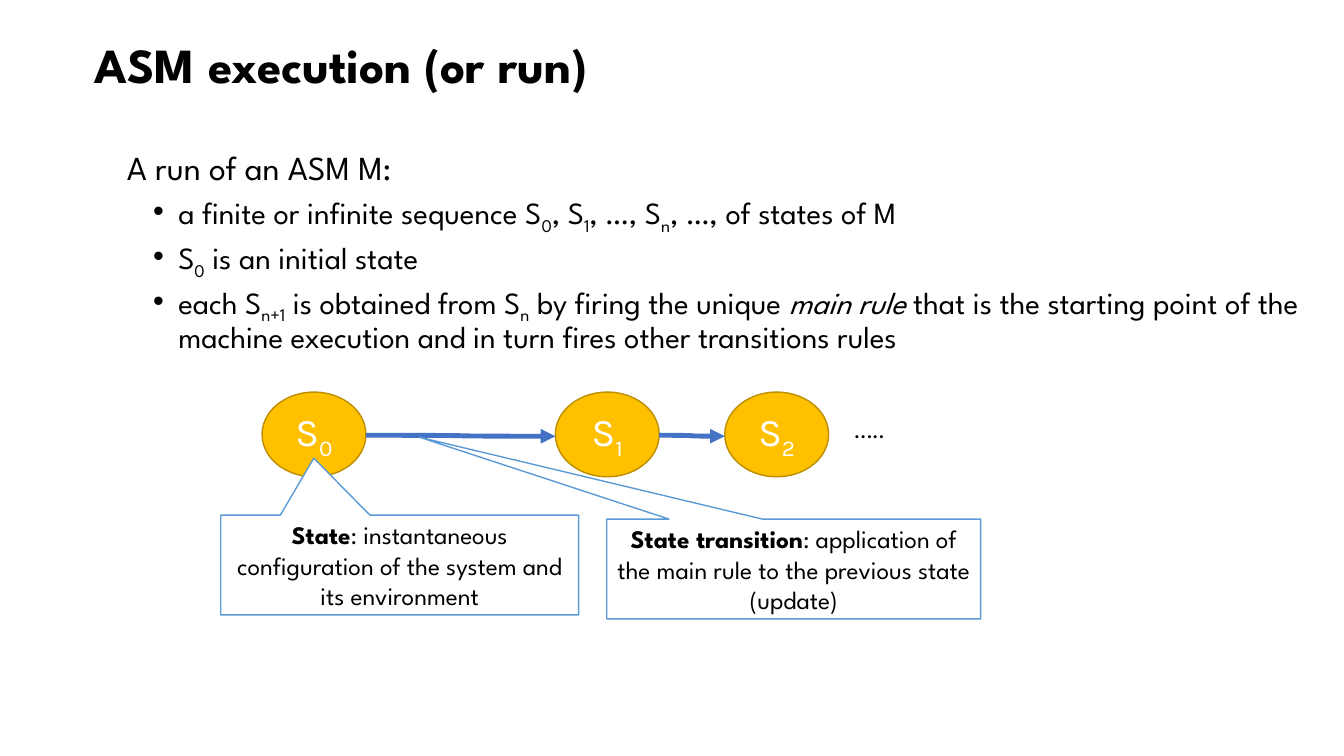
from dataclasses import dataclass

from lxml.etree import SubElement as Sub
from pptx import Presentation
from pptx.dml.color import RGBColor as RGB
from pptx.enum.shapes import MSO_CONNECTOR as Link, MSO_SHAPE as Kind
from pptx.enum.text import MSO_ANCHOR as Anchor, PP_ALIGN as Align
from pptx.oxml.ns import qn
from pptx.util import Pt


@dataclass(frozen=True)
class Theme:
    ink: RGB = RGB(0, 0, 0)
    white: RGB = RGB(255, 255, 255)
    gold: RGB = RGB(0xFF, 0xC0, 0x00)
    rim: RGB = RGB(0xBD, 0x8E, 0x00)
    edge: RGB = RGB(0x5B, 0x9B, 0xD5)
    arrow: RGB = RGB(0x44, 0x72, 0xC4)
    main: str = "League Spartan"
    node: str = "Karla"
    plain: str = "Calibri"
    title: int = 35
    lead: int = 24
    item: int = 22
    state: int = 28
    note: int = 18


T = Theme()

# State circles: shared size and top, left edge of each
WIDE, HIGH, TOP = 74.2, 60.5, 280.1
LEFTS = (187.2, 396.7, 517.7)
MID = 310.9

# Runs are (text, style); style is "", "sub", "bold" or "ital"
LEAD = [("A run of an ASM M:", "")]
ITEMS = [
    [("a finite or infinite sequence S", ""), ("0", "sub"), (", S", ""),
     ("1", "sub"), (", …, S", ""), ("n", "sub"), (", …, of states of M", "")],
    [("S", ""), ("0", "sub"), (" is an initial state", "")],
    [("each S", ""), ("n+1", "sub"), (" is obtained from S", ""), ("n", "sub"),
     (" by firing the unique ", ""), ("main rule ", "ital"),
     ("that is the starting point of the machine execution and in turn "
      "fires other transitions rules", "")],
]


def write(para, runs, face, size, color):
    """Fill a paragraph with styled runs in one font."""
    for text, style in runs:
        run = para.add_run()
        run.text = text
        if style == "sub":
            run._r.get_or_add_rPr().set("baseline", "-25000")
        elif style == "bold":
            run.font.bold = True
        elif style == "ital":
            run.font.italic = True
    font = para.font
    font.name, font.size = face, Pt(size)
    font.color.rgb = color


def add_box(slide, left, top, width, height):
    """Add a wrapping text box and return its frame."""
    box = slide.shapes.add_textbox(Pt(left), Pt(top), Pt(width), Pt(height))
    box.text_frame.word_wrap = True
    return box.text_frame


def indent(para, left, hang=0, mark=None):
    props = para._p.get_or_add_pPr()
    props.set("marL", str(Pt(left)))
    props.set("indent", str(Pt(-hang)))
    if mark:
        Sub(props, qn("a:buFont")).set("typeface", "Arial")
        Sub(props, qn("a:buChar")).set("char", mark)


def add_body(slide):
    frame = add_box(slide, 52.6, 104.4, 890.6, 356.4)
    para = frame.paragraphs[0]
    para.line_spacing = 0.9
    indent(para, 31)
    write(para, LEAD, T.main, T.lead, T.ink)
    for runs in ITEMS:
        para = frame.add_paragraph()
        para.level = 1
        para.line_spacing, para.space_before = 0.9, Pt(5)
        indent(para, 67.7, 18, "•")
        write(para, runs, T.main, T.item, T.ink)


def add_form(slide, kind, area, fill, line, runs, face, size, color):
    """Add a filled shape with centred text."""
    form = slide.shapes.add_shape(kind, *map(Pt, area))
    form.shadow.inherit = False
    form.fill.solid()
    form.fill.fore_color.rgb = fill
    form.line.color.rgb = line
    form.line.width = Pt(1)
    frame = form.text_frame
    frame.word_wrap = True
    frame.vertical_anchor = Anchor.MIDDLE
    para = frame.paragraphs[0]
    para.alignment = Align.CENTER
    write(para, runs, face, size, color)
    return form


def add_state(slide, left, index):
    add_form(slide, Kind.OVAL, (left, TOP, WIDE, HIGH), T.gold, T.rim,
             [("S", ""), (str(index), "sub")], T.node, T.state, T.white)


def add_note(slide, area, tip, term, text):
    """Add a callout whose tip is given relative to its centre."""
    note = add_form(slide, Kind.RECTANGULAR_CALLOUT, area, T.white, T.edge,
                    [(term, "bold"), (text, "")], T.main, T.note, T.ink)
    note.adjustments[0], note.adjustments[1] = tip


def add_arrow(slide, start, end):
    """Add a curved arrow between two neighbouring states."""
    arrow = slide.shapes.add_connector(
        Link.CURVE, Pt(start + WIDE), Pt(MID), Pt(end), Pt(MID + 0.7))
    arrow.line.color.rgb = T.arrow
    arrow.line.width = Pt(3.5)
    Sub(arrow.line._get_or_add_ln(), qn("a:tailEnd")).set("type", "triangle")
    Sub(arrow._element.spPr, qn("a:effectLst"))


def main():
    deck = Presentation()
    deck.slide_width, deck.slide_height = Pt(960), Pt(540)
    slide = deck.slides.add_slide(deck.slide_layouts[6])

    # Title and text
    para = add_box(slide, 60.5, 25.9, 838.8, 78.5).paragraphs[0]
    para.line_spacing = 0.9
    write(para, [("ASM execution (or run)", "")], T.main, T.title, T.ink)
    para.font.bold = True
    add_body(slide)

    # States
    for index, left in enumerate(LEFTS):
        add_state(slide, left, index)
    dots = add_box(slide, 603.4, 291.6, 61.9, 28.8)
    write(dots.paragraphs[0], [("…..", "")], T.plain, T.note, T.ink)

    # Transitions and notes
    first, second, third = LEFTS
    add_note(slide, (157.7, 367.9, 255.6, 71.3), (-0.24, -1.07), "State",
             ": instantaneous conﬁguration of the system and its environment")
    add_arrow(slide, first, second)
    add_note(slide, (433.4, 370.8, 267.1, 71.3), (-1, -1.32),
             "State transition",
             ": application of the main rule to the previous state (update)")
    add_arrow(slide, second, third)

    deck.save("out.pptx")


if __name__ == "__main__":
    main()
